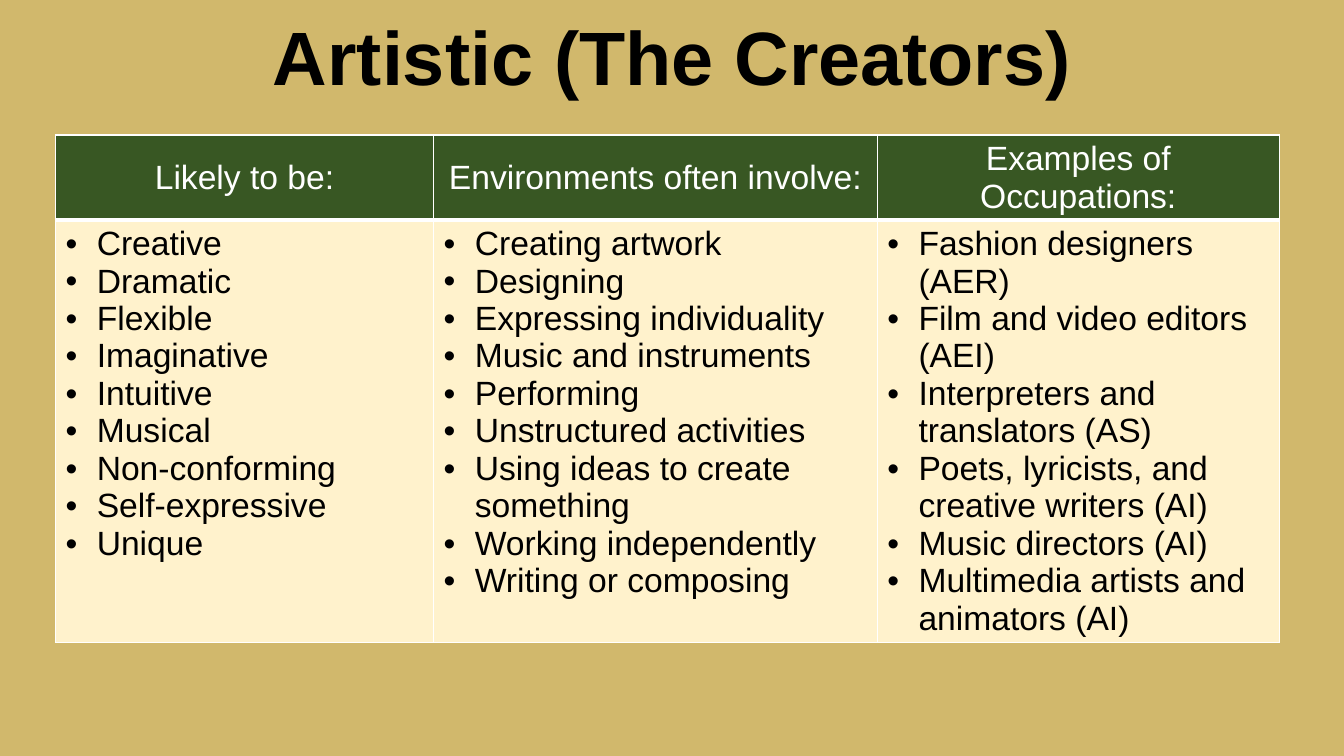
import pptx
import pptx.dml.color
import pptx.enum.text
import pptx.oxml.ns
import pptx.util
from lxml import etree

Inches = pptx.util.Inches
Align = pptx.enum.text.PP_ALIGN
Anchor = pptx.enum.text.MSO_ANCHOR

COLORS = {
    "sand": "D1B86C",
    "green": "385723",
    "cream": "FFF2CC",
    "white": "FFFFFF",
    "black": "000000",
}

COLUMNS = [
    ("Likely to be:", 3.75, [
        "Creative", "Dramatic", "Flexible", "Imaginative", "Intuitive",
        "Musical", "Non-conforming", "Self-expressive", "Unique",
    ]),
    ("Environments often involve:", 4.4, [
        "Creating artwork", "Designing", "Expressing individuality",
        "Music and instruments", "Performing", "Unstructured activities",
        "Using ideas to create something", "Working independently",
        "Writing or composing",
    ]),
    ("Examples of Occupations:", 3.99, [
        "Fashion designers (AER)", "Film and video editors (AEI)",
        "Interpreters and translators (AS)",
        "Poets, lyricists, and creative writers (AI)",
        "Music directors (AI)", "Multimedia artists and animators (AI)",
    ]),
]


class SlideBuilder:
    """Holds the style and the current slide, and adds each kind of element."""

    font = "Arial"
    text_size = 24
    title_size = 54
    indent = Inches(0.31)

    def __init__(self, deck):
        self.page = deck.slides.add_slide(deck.slide_layouts[0])
        self.page.placeholders[1].element.getparent().remove(
            self.page.placeholders[1].element)
        self.paint(self.page.background.fill, "sand")

    def paint(self, fill, color):
        fill.solid()
        fill.fore_color.rgb = pptx.dml.color.RGBColor.from_string(COLORS[color])

    def style(self, para, size, color, bold=False):
        for span in para.runs:
            span.font.name = self.font
            span.font.size = pptx.util.Pt(size)
            span.font.bold = bold
            self.paint(span.font.fill, color)

    def title(self, text, left, top, width, height):
        box = self.page.shapes.title
        box.left, box.top = Inches(left), Inches(top)
        box.width, box.height = Inches(width), Inches(height)
        frame = box.text_frame
        frame.text = text
        frame.word_wrap = True
        frame.auto_size = pptx.enum.text.MSO_AUTO_SIZE.NONE
        frame.vertical_anchor = Anchor.BOTTOM
        para = frame.paragraphs[0]
        para.alignment = Align.CENTER
        para.line_spacing = 0.9
        self.style(para, self.title_size, "black", bold=True)

    def borders(self, cell, bottom):
        properties = cell._tc.get_or_add_tcPr()
        widths = {"a:lnL": 1, "a:lnR": 1, "a:lnT": 1, "a:lnB": bottom}
        for tag, width in widths.items():
            line = etree.SubElement(properties, pptx.oxml.ns.qn(tag),
                                    w=str(pptx.util.Pt(width)))
            fill = etree.SubElement(line, pptx.oxml.ns.qn("a:solidFill"))
            etree.SubElement(fill, pptx.oxml.ns.qn("a:srgbClr"),
                             val=COLORS["white"])

    def bullet(self, para):
        properties = para._p.get_or_add_pPr()
        properties.set("marL", str(self.indent))
        properties.set("indent", str(-self.indent))
        etree.SubElement(properties, pptx.oxml.ns.qn("a:buFont"),
                         typeface=self.font)
        etree.SubElement(properties, pptx.oxml.ns.qn("a:buChar"), char="•")

    def header_cell(self, cell, text):
        self.borders(cell, bottom=3)
        self.paint(cell.fill, "green")
        cell.vertical_anchor = Anchor.MIDDLE
        cell.text_frame.text = text
        para = cell.text_frame.paragraphs[0]
        para.alignment = Align.CENTER
        self.style(para, self.text_size, "white")

    def list_cell(self, cell, items):
        self.borders(cell, bottom=1)
        self.paint(cell.fill, "cream")
        cell.text_frame.text = "\n".join(items)
        for para in cell.text_frame.paragraphs:
            self.bullet(para)
            self.style(para, self.text_size, "black")

    def table(self, columns, left, top, row_heights):
        width = sum(column[1] for column in columns)
        table = self.page.shapes.add_table(
            len(row_heights), len(columns), Inches(left), Inches(top),
            Inches(width), Inches(sum(row_heights))).table
        for row, height in zip(table.rows, row_heights):
            row.height = Inches(height)
        for index, (heading, column_width, items) in enumerate(columns):
            table.columns[index].width = Inches(column_width)
            self.header_cell(table.cell(0, index), heading)
            self.list_cell(table.cell(1, index), items)


def main():
    deck = pptx.Presentation()
    deck.slide_width, deck.slide_height = Inches(13.33), Inches(7.5)
    builder = SlideBuilder(deck)
    builder.title("Artistic (The Creators)", 0, 0.17, 13.33, 0.89)
    builder.table(COLUMNS, 0.55, 1.34, [0.84, 4.19])
    deck.save("out.pptx")


if __name__ == "__main__":
    main()
